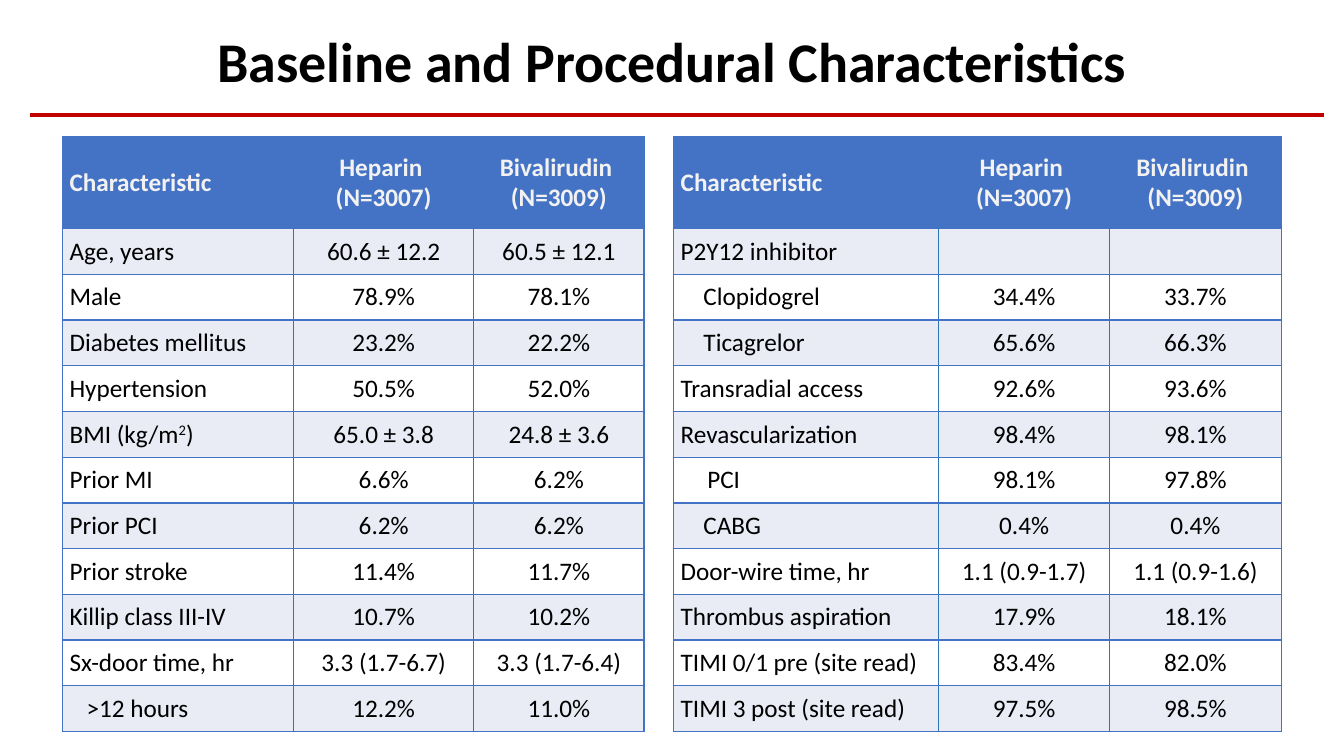
from lxml import etree
from pptx import Presentation
from pptx.dml.color import RGBColor
from pptx.enum.shapes import MSO_CONNECTOR
from pptx.enum.text import MSO_ANCHOR, PP_ALIGN
from pptx.oxml.ns import qn
from pptx.util import Pt

STRAIGHT = MSO_CONNECTOR.STRAIGHT
MIDDLE = MSO_ANCHOR.MIDDLE
LEFT, CENTER = PP_ALIGN.LEFT, PP_ALIGN.CENTER

COLORS = {
    "black": "000000", "white": "FFFFFF", "red": "C00000", "header": "4472C4",
    "header_text": "F2F2F2", "band": "E9EBF5", "column_line": "2E75B6",
}
TITLE_ONLY = 5
HEADER_HEIGHT, ROW_HEIGHT = 65.4, 32.67
TABLE_TOP = 97.9
HEADER = ("Characteristic", "Heparin \n(N=3007)", "Bivalirudin \n(N=3009)")

BASELINE_ROWS = [
    ("Age, years", "60.6 ± 12.2", "60.5 ± 12.1"),
    ("Male", "78.9%", "78.1%"),
    ("Diabetes mellitus", "23.2%", "22.2%"),
    ("Hypertension", "50.5%", "52.0%"),
    ("BMI (kg/m^2^)", "65.0 ± 3.8", "24.8 ± 3.6"),
    ("Prior MI", "6.6%", "6.2%"),
    ("Prior PCI", "6.2%", "6.2%"),
    ("Prior stroke", "11.4%", "11.7%"),
    ("Killip class III-IV", "10.7%", "10.2%"),
    ("Sx-door time, hr", "3.3 (1.7-6.7)", "3.3 (1.7-6.4)"),
    (">12 hours", "12.2%", "11.0%"),
]
PROCEDURE_ROWS = [
    ("P2Y12 inhibitor", "", ""),
    ("Clopidogrel", "34.4%", "33.7%"),
    ("Ticagrelor", "65.6%", "66.3%"),
    ("Transradial access", "92.6%", "93.6%"),
    ("Revascularization", "98.4%", "98.1%"),
    ("PCI", "98.1%", "97.8%"),
    ("CABG", "0.4%", "0.4%"),
    ("Door-wire time, hr", "1.1 (0.9-1.7)", "1.1 (0.9-1.6)"),
    ("Thrombus aspiration", "17.9%", "18.1%"),
    ("TIMI 0/1 pre (site read)", "83.4%", "82.0%"),
    ("TIMI 3 post (site read)", "97.5%", "98.5%"),
]
INDENTS = {">12 hours": 12.2, "Clopidogrel": 16.3, "Ticagrelor": 16.3, "PCI": 19, "CABG": 16.3}


def color(name):
    return RGBColor.from_string(COLORS[name])


def write_text(paragraph, text, font, size=18, fill="black", bold=False, align=LEFT, indent=0):
    paragraph.alignment = align
    if indent:
        paragraph._p.get_or_add_pPr().set("marL", str(Pt(indent)))
    for line_number, line in enumerate(text.split("\n")):
        if line_number:
            paragraph.add_line_break()
        for part_number, part in enumerate(line.split("^")):
            if not part:
                continue
            run = paragraph.add_run()
            run.text = part
            run.font.name, run.font.size, run.font.bold = font, Pt(size), bold
            run.font.color.rgb = color(fill)
            if part_number % 2:
                run.font._element.set("baseline", "30000")


class TableSlide:
    """Holds the font and the current slide, and adds elements to it."""

    def __init__(self, presentation, font):
        self.font = font
        self.slide = presentation.slides.add_slide(presentation.slide_layouts[TITLE_ONLY])

    def title(self, text, left, top, width, height):
        shape = self.slide.shapes.title
        shape.left, shape.top, shape.width, shape.height = map(Pt, (left, top, width, height))
        shape.text_frame.vertical_anchor = MIDDLE
        write_text(shape.text_frame.paragraphs[0], text, self.font, size=40, bold=True, align=CENTER)

    def rule(self, left, right, top):
        line = self.slide.shapes.add_connector(STRAIGHT, Pt(left), Pt(top), Pt(right), Pt(top))
        line.line.color.rgb = color("red")
        line.line.width = Pt(3)
        etree.SubElement(line._element.spPr, qn("a:effectLst"))

    def borders(self, cell, sides):
        properties = cell._tc.get_or_add_tcPr()
        for side, name in sides.items():
            line = etree.SubElement(properties, qn(f"a:ln{side}"), w=str(Pt(1)))
            if name:
                fill = etree.SubElement(line, qn("a:solidFill"))
                etree.SubElement(fill, qn("a:srgbClr"), val=COLORS[name])
            else:
                etree.SubElement(line, qn("a:noFill"))

    def cell(self, cell, text, is_header, column, last_column, background):
        inner = None if is_header else "column_line"
        self.borders(cell, {
            "L": inner if column else "header",
            "R": inner if column < last_column else "header",
            "T": "header",
            "B": "header",
        })
        cell.fill.solid()
        cell.fill.fore_color.rgb = color(background)
        cell.vertical_anchor = MIDDLE
        cell.margin_left = cell.margin_right = Pt(5.2)
        cell.margin_top = cell.margin_bottom = Pt(0)
        write_text(cell.text_frame.paragraphs[0], text, self.font, bold=is_header,
                   fill="header_text" if is_header else "black",
                   align=CENTER if column else LEFT, indent=INDENTS.get(text, 0))

    def table(self, rows, left, widths):
        rows = [HEADER, *rows]
        height = HEADER_HEIGHT + ROW_HEIGHT * (len(rows) - 1)
        table = self.slide.shapes.add_table(
            len(rows), len(widths), Pt(left), Pt(TABLE_TOP), Pt(sum(widths)), Pt(height)).table
        table.horz_banding = False
        for column, width in zip(table.columns, widths):
            column.width = Pt(width)
        for row_number, values in enumerate(rows):
            is_header = row_number == 0
            table.rows[row_number].height = Pt(HEADER_HEIGHT if is_header else ROW_HEIGHT)
            background = "header" if is_header else ("white", "band")[row_number % 2]
            for column, text in enumerate(values):
                self.cell(table.cell(row_number, column), text, is_header,
                          column, len(widths) - 1, background)


def main():
    presentation = Presentation()
    presentation.slide_width, presentation.slide_height = Pt(960), Pt(540)
    slide = TableSlide(presentation, "Calibri")
    slide.title("Baseline and Procedural Characteristics", 0, 15.1, 960, 55.4)
    slide.rule(21.6, 946, 82)
    slide.table(BASELINE_ROWS, 44.5, (165.2, 128.8, 121.5))
    slide.table(PROCEDURE_ROWS, 481, (189.3, 122.4, 122.4))
    presentation.save("out.pptx")


if __name__ == "__main__":
    main()
